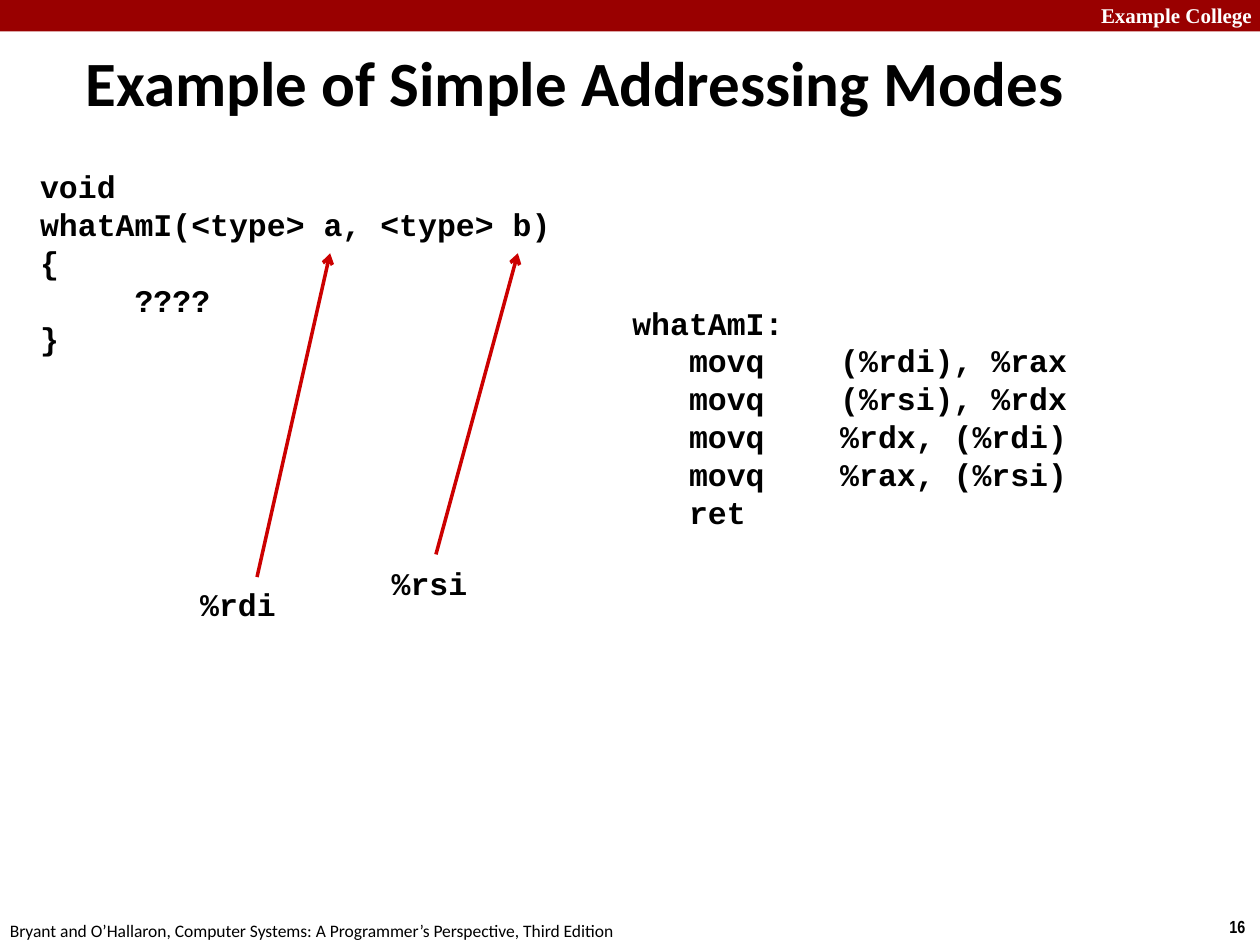
from lxml import etree
from pptx import Presentation
from pptx.dml.color import RGBColor
from pptx.enum.shapes import MSO_CONNECTOR, MSO_SHAPE
from pptx.enum.text import MSO_ANCHOR, PP_ALIGN
from pptx.oxml.ns import qn
from pptx.util import Inches, Pt

RECTANGLE = MSO_SHAPE.RECTANGLE
STRAIGHT = MSO_CONNECTOR.STRAIGHT
MIDDLE = MSO_ANCHOR.MIDDLE
LEFT = PP_ALIGN.LEFT
TITLE_ONLY = 5

COLORS = {"banner": "990000", "arrow": "CC0000", "text": "000000", "light": "FFFFFF"}
CHARACTER = 0.15  # width in inches of one 18 pt Courier New character

PROTOTYPE = ["void", "whatAmI(<type> a, <type> b)", "{", "\t????", "}"]
ASSEMBLY = [
    "whatAmI:",
    "\tmovq\t(%rdi), %rax",
    "\tmovq\t(%rsi), %rdx",
    "\tmovq\t%rdx, (%rdi)",
    "\tmovq\t%rax, (%rsi)",
    "\tret",
]
# register, label position, arrow start, arrow end
REGISTERS = [
    ("%rdi", (1.49, 4.59), (2.04, 4.58), (2.62, 2.01)),
    ("%rsi", (3.01, 4.43), (3.46, 4.4), (4.11, 2.01)),
]


def color(name):
    return RGBColor.from_string(COLORS[name])


class SlideBuilder:
    def __init__(self, presentation):
        self.slide = presentation.slides.add_slide(presentation.slide_layouts[TITLE_ONLY])

    def add_run(self, paragraph, text, font, size, bold=True, ink="text"):
        paragraph.alignment = LEFT
        run = paragraph.add_run()
        run.text = text
        run.font.name = font
        run.font.size = Pt(size)
        run.font.bold = bold
        run.font.color.rgb = color(ink)

    def title(self, text, box):
        shape = self.slide.shapes.title
        shape.left, shape.top, shape.width, shape.height = map(Inches, box)
        shape.text_frame.vertical_anchor = MIDDLE
        self.add_run(shape.text_frame.paragraphs[0], text, "Calibri", 36)

    def banner(self, box):
        shape = self.slide.shapes.add_shape(RECTANGLE, *map(Inches, box))
        shape.shadow.inherit = False
        shape.fill.solid()
        shape.fill.fore_color.rgb = color("banner")
        shape.line.fill.background()

    def text(self, lines, box, font, size, bold=True, ink="text", wrap=True, tabs=()):
        """Add a text box with one paragraph per line and tab stops in inches."""
        frame = self.slide.shapes.add_textbox(*map(Inches, box)).text_frame
        frame.word_wrap = wrap
        for index, line in enumerate(lines):
            paragraph = frame.add_paragraph() if index else frame.paragraphs[0]
            self.add_run(paragraph, line, font, size, bold, ink)
            if tabs:
                properties = paragraph._p.get_or_add_pPr()
                tab_list = etree.SubElement(properties, qn("a:tabLst"))
                for position in tabs:
                    etree.SubElement(tab_list, qn("a:tab"), pos=str(Inches(position)), algn="l")

    def code(self, lines, box, tabs=()):
        self.text(lines, box, "Courier New", 18, tabs=tabs)

    def arrow(self, start, end):
        connector = self.slide.shapes.add_connector(STRAIGHT, *map(Inches, start + end))
        connector.line.color.rgb = color("arrow")
        connector.line.width = Pt(2)
        etree.SubElement(connector.line._get_or_add_ln(), qn("a:tailEnd"), type="arrow")
        etree.SubElement(connector._element.spPr, qn("a:effectLst"))


def main():
    presentation = Presentation()
    presentation.slide_width = Inches(10)
    presentation.slide_height = Inches(7.5)

    builder = SlideBuilder(presentation)
    builder.banner((0, 0, 10, 0.25))
    builder.text(["Example College"], (8.64, -0.03, 1.43, 0.3), "Times New Roman", 12, ink="light")
    builder.text(["16"], (9.66, 7.22, 0.34, 0.27), "Arial Narrow", 10, wrap=False)
    builder.text(
        ["Bryant and O’Hallaron, Computer Systems: A Programmer’s Perspective, Third Edition"],
        (-0.02, 7.25, 5.08, 0.27), "Calibri", 10, bold=False, wrap=False,
    )
    builder.title("Example of Simple Addressing Modes", (0.58, 0.33, 8.38, 0.63))
    builder.code(ASSEMBLY, (4.92, 2.36, 4.58, 1.92), tabs=(3 * CHARACTER, 11 * CHARACTER))
    builder.code(PROTOTYPE, (0.22, 1.28, 4.44, 1.62), tabs=(5 * CHARACTER,))
    for register, (left, top), start, end in REGISTERS:
        builder.arrow(start, end)
        builder.code([register], (left, top, 1.31, 0.4))

    presentation.save("out.pptx")


if __name__ == "__main__":
    main()
